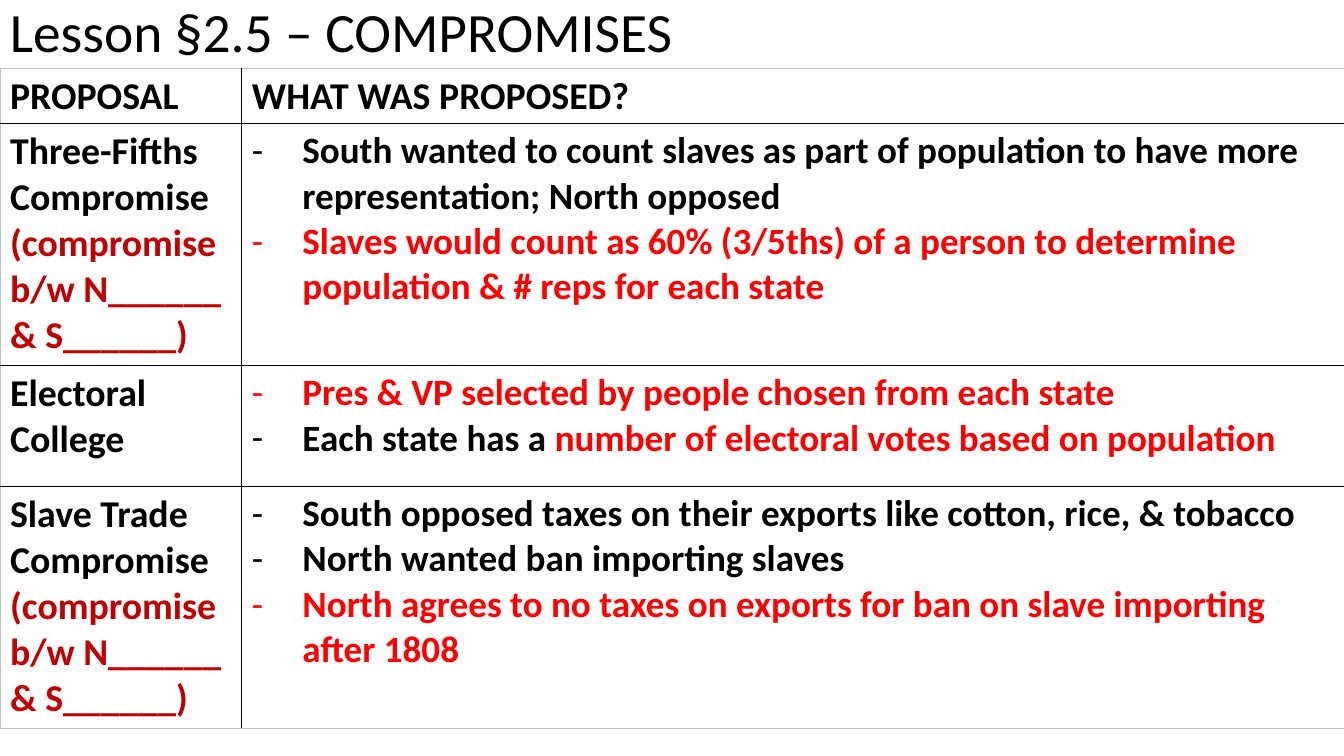
from dataclasses import dataclass

from lxml.etree import SubElement
from pptx import Presentation
from pptx.dml.color import RGBColor
from pptx.enum.text import MSO_ANCHOR
from pptx.oxml.ns import qn
from pptx.util import Emu, Inches, Pt

BLACK = RGBColor(0x00, 0x00, 0x00)
RED = RGBColor(0xFF, 0x00, 0x00)
DARK_RED = RGBColor(0xC0, 0x00, 0x00)
GREY = RGBColor(0xBF, 0xBF, 0xBF)
FONT = "Calibri"
WIDTH, HEIGHT = Inches(13.33), Inches(7.5)

# Shares of the slide's width and height
TITLE_SHARE = 0.09
COLUMN_SHARES = (0.18, 0.82)
ROW_SHARES = (0.07, 0.32, 0.16, 0.32)


@dataclass(frozen=True)
class Span:
    text: str
    color: RGBColor = BLACK


@dataclass(frozen=True)
class Proposal:
    name: str
    points: tuple[tuple[Span, ...], ...]
    hint: str = ""


HINT = "(compromise b/w N______ & S______)"
PROPOSALS = (
    Proposal("Three-Fifths Compromise", (
        (Span("South wanted to count slaves as part of population to have more "
              "representation; North opposed"),),
        (Span("Slaves would count as 60% (3/5ths) of a person to determine "
              "population & # reps for each state", RED),),
    ), HINT),
    Proposal("Electoral College", (
        (Span("Pres & VP selected by people chosen from each state", RED),),
        (Span("Each state has a "),
         Span("number of electoral votes based on population", RED)),
    )),
    Proposal("Slave Trade Compromise", (
        (Span("South opposed taxes on their exports like cotton, rice, & tobacco"),),
        (Span("North wanted ban importing slaves"),),
        (Span("North agrees to no taxes on exports for ban on slave importing "
              "after 1808", RED),),
    ), HINT),
)


def add_span(para, text: str, *, size: float, color: RGBColor = BLACK,
             bold: bool = True) -> None:
    span = para.add_run()
    span.text = text
    span.font.name = FONT
    span.font.size = Pt(size)
    span.font.bold = bold
    span.font.color.rgb = color


def add_dash(para) -> None:
    properties = para._p.get_or_add_pPr()
    properties.set("marL", str(Inches(0.5)))
    properties.set("indent", str(-Inches(0.5)))
    SubElement(properties, qn("a:buFont"), typeface=FONT)
    SubElement(properties, qn("a:buChar"), char="-")


def fill_cell(cell, paragraphs, *, size: float, dashed: bool = False) -> None:
    frame = cell.text_frame
    for index, spans in enumerate(paragraphs):
        para = frame.add_paragraph() if index else frame.paragraphs[0]
        if dashed:
            add_dash(para)
        for span in spans:
            add_span(para, span.text, size=size, color=span.color)


def add_border(cell, side: str, color: RGBColor, width: float) -> None:
    line = SubElement(cell._tc.get_or_add_tcPr(), qn(f"a:{side}"), w=str(Pt(width)))
    SubElement(SubElement(line, qn("a:solidFill")), qn("a:srgbClr"), val=str(color))


def style_cell(cell, row: int, column: int) -> None:
    outer_sides = {
        "lnL": column == 0,
        "lnR": column == len(COLUMN_SHARES) - 1,
        "lnT": row == 0,
        "lnB": row == len(ROW_SHARES) - 1,
    }
    for side, outer in outer_sides.items():
        add_border(cell, side, GREY if outer else BLACK, 0.75 if outer else 1)
    cell.fill.background()


def add_title(page, text: str) -> None:
    box = page.shapes.add_textbox(0, 0, WIDTH, Emu(int(HEIGHT * TITLE_SHARE)))
    frame = box.text_frame
    frame.word_wrap = True
    frame.vertical_anchor = MSO_ANCHOR.MIDDLE
    para = frame.paragraphs[0]
    para.line_spacing = 0.9
    add_span(para, text, size=39.6, bold=False)


def add_proposals(page) -> None:
    table = page.shapes.add_table(
        len(ROW_SHARES), len(COLUMN_SHARES), 0, int(HEIGHT * TITLE_SHARE),
        WIDTH, int(HEIGHT * sum(ROW_SHARES))).table
    table.first_row = table.horz_banding = False

    # Grid
    for column, share in zip(table.columns, COLUMN_SHARES):
        column.width = Emu(int(WIDTH * share))
    for row, share in zip(table.rows, ROW_SHARES):
        row.height = Emu(int(HEIGHT * share))
    for row in range(len(ROW_SHARES)):
        for column in range(len(COLUMN_SHARES)):
            style_cell(table.cell(row, column), row, column)

    # Headings and proposals
    for column, heading in enumerate(("PROPOSAL", "WHAT WAS PROPOSED?")):
        fill_cell(table.cell(0, column), [[Span(heading)]], size=27)
    for row, proposal in enumerate(PROPOSALS, start=1):
        label = [[Span(proposal.name)]]
        if proposal.hint:
            label.append([Span(proposal.hint, DARK_RED)])
        fill_cell(table.cell(row, 0), label, size=27)
        fill_cell(table.cell(row, 1), proposal.points, size=26.5, dashed=True)


def main() -> None:
    deck = Presentation()
    deck.slide_width, deck.slide_height = WIDTH, HEIGHT
    page = deck.slides.add_slide(deck.slide_layouts[6])
    add_title(page, "Lesson §2.5 – COMPROMISES")
    add_proposals(page)
    deck.save("out.pptx")


if __name__ == "__main__":
    main()
